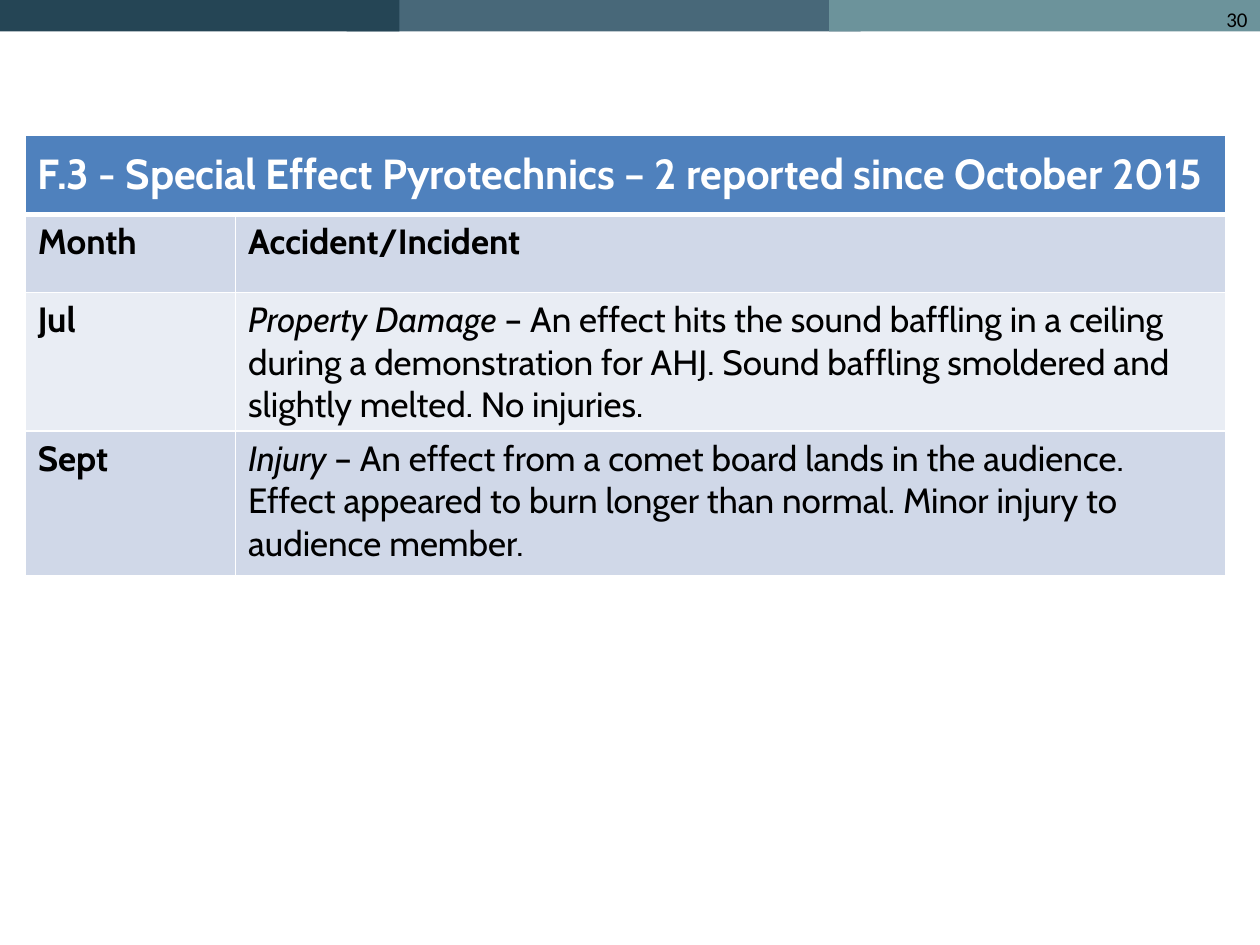
from lxml import etree
from pptx import Presentation
from pptx.dml.color import RGBColor
from pptx.enum.shapes import MSO_SHAPE
from pptx.enum.text import MSO_ANCHOR, PP_ALIGN
from pptx.oxml.ns import qn
from pptx.util import Inches, Pt

RECT = MSO_SHAPE.RECTANGLE
MIDDLE = MSO_ANCHOR.MIDDLE
RIGHT = PP_ALIGN.RIGHT

WHITE = RGBColor(0xFF, 0xFF, 0xFF)
BLACK = RGBColor(0x00, 0x00, 0x00)
SLATE = RGBColor(0x48, 0x68, 0x79)
NAVY = RGBColor(0x25, 0x45, 0x55)
TEAL = RGBColor(0x6C, 0x93, 0x9B)
BLUE = RGBColor(0x4F, 0x81, 0xBD)
BAND_DARK = RGBColor(0xD0, 0xD8, 0xE8)
BAND_LIGHT = RGBColor(0xE9, 0xED, 0xF4)


def set_borders(cell, bottom_width):
    tc_pr = cell._tc.get_or_add_tcPr()
    widths = [("a:lnL", 1), ("a:lnR", 1), ("a:lnT", 1), ("a:lnB", bottom_width)]
    for i, (tag, width) in enumerate(widths):
        ln = etree.Element(qn(tag), w=str(Pt(width)))
        fill = etree.SubElement(ln, qn("a:solidFill"))
        etree.SubElement(fill, qn("a:srgbClr"), val=str(WHITE))
        tc_pr.insert(i, ln)


prs = Presentation()
prs.slide_width = Inches(10)
prs.slide_height = Inches(7.5)
s = prs.slides.add_slide(prs.slide_layouts[6])

for left, width, color in [(2.75, 4.08, SLATE), (0, 3.17, NAVY), (6.58, 3.42, TEAL)]:
    sp = s.shapes.add_shape(RECT, Inches(left), 0, Inches(width), Inches(0.25))
    sp.shadow.inherit = False
    sp.fill.solid()
    sp.fill.fore_color.rgb = color
    sp.line.fill.background()

tb = s.shapes.add_textbox(Inches(7.67), 0, Inches(2.33), Inches(0.52))
tf = tb.text_frame
tf.word_wrap = True
p = tf.paragraphs[0]
p.text = "30"
p.alignment = RIGHT
r = p.runs[0]
r.font.size = Pt(12)
r.font.name = "Calibri"
r.font.color.rgb = BLACK

rows = [
    (0.63, BLUE, "F.3 - Special Effect Pyrotechnics – 2 reported since October 2015", "", ""),
    (0.62, BAND_DARK, "Month", "", "Accident/Incident"),
    (0.87, BAND_LIGHT, "Jul", "Property Damage ",
     "– An effect hits the sound baffling in a ceiling during a demonstration for AHJ. "
     "Sound baffling smoldered and slightly melted. No injuries."),
    (1.15, BAND_DARK, "Sept", "Injury",
     " – An effect from a comet board lands in the audience. "
     "Effect appeared to burn longer than normal. Minor injury to audience member."),
]
table = s.shapes.add_table(
    len(rows), 2, Inches(0.2), Inches(1.07), Inches(9.53), Inches(3.27)
).table
table.columns[0].width = Inches(1.67)
table.columns[1].width = Inches(7.86)
table.cell(0, 0).merge(table.cell(0, 1))
table.cell(0, 0).vertical_anchor = MIDDLE

for i, (height, color, label, kind, detail) in enumerate(rows):
    table.rows[i].height = Inches(height)
    label_cell, detail_cell = table.cell(i, 0), table.cell(i, 1)
    for cell in (label_cell, detail_cell):
        cell.fill.solid()
        cell.fill.fore_color.rgb = color
        set_borders(cell, 3 if i == 0 else 1)
    runs = [
        (label_cell, label, True, False),
        (detail_cell, kind, False, True),
        (detail_cell, detail, not kind, False),
    ]
    for cell, text, bold, italic in runs:
        if text:
            r = cell.text_frame.paragraphs[0].add_run()
            r.text = text
            r.font.name = "Cabin"
            r.font.size = Pt(24 if i == 0 else 20)
            r.font.bold = bold
            r.font.italic = italic
            r.font.color.rgb = WHITE if i == 0 else BLACK

prs.save("out.pptx")
